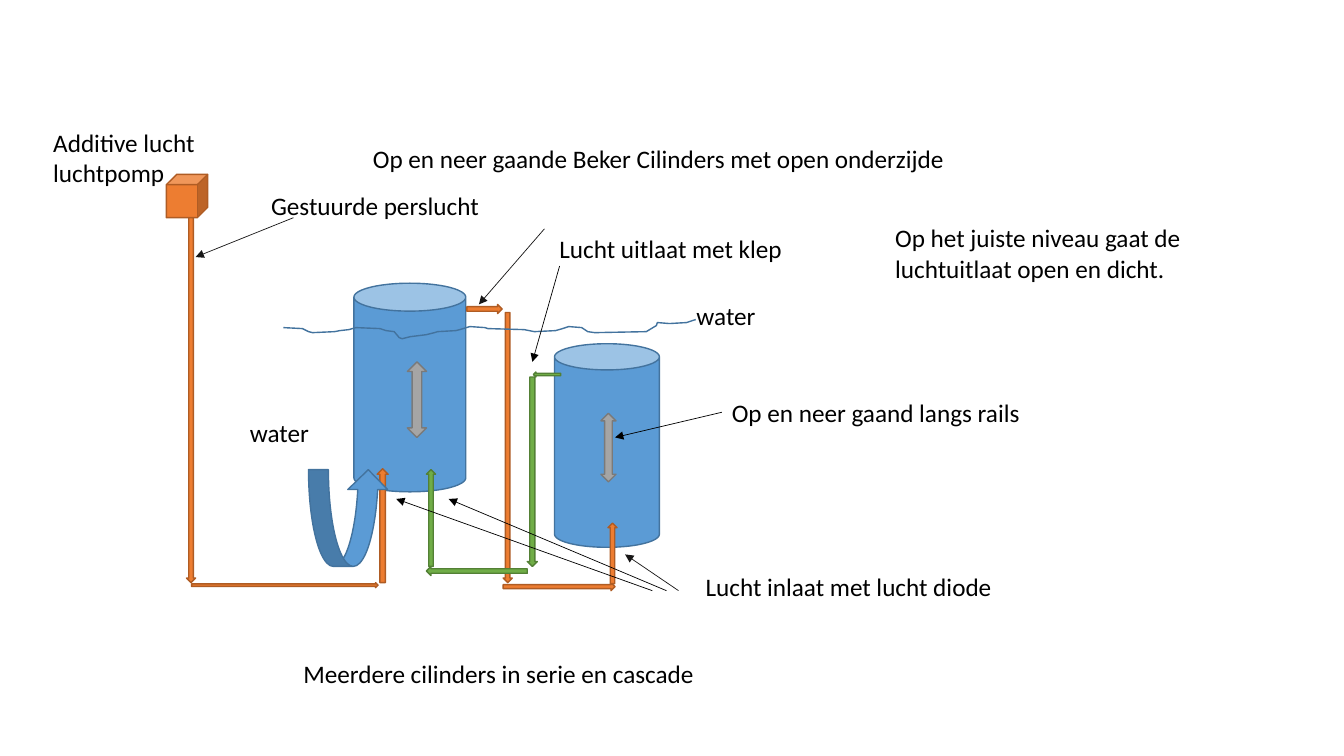
from lxml import etree
from pptx import Presentation
from pptx.dml.color import RGBColor
from pptx.enum.shapes import MSO_CONNECTOR, MSO_SHAPE
from pptx.enum.text import MSO_AUTO_SIZE
from pptx.oxml.ns import qn
from pptx.util import Pt

PX = 9144  # 100 px to the inch
CAN, CUBE = MSO_SHAPE.CAN, MSO_SHAPE.CUBE
RIGHT, LEFT = MSO_SHAPE.RIGHT_ARROW, MSO_SHAPE.LEFT_ARROW
UP, DOWN = MSO_SHAPE.UP_ARROW, MSO_SHAPE.DOWN_ARROW
UP_DOWN, CURVED_UP = MSO_SHAPE.UP_DOWN_ARROW, MSO_SHAPE.CURVED_UP_ARROW
STRAIGHT = MSO_CONNECTOR.STRAIGHT
GROW = MSO_AUTO_SIZE.SHAPE_TO_FIT_TEXT

# (fill, outline)
BLUE = ("5B9BD5", "43739E")
ORANGE = ("ED7D31", "AF5C24")
GREEN = ("70AD47", "538035")
GREY = ("A5A5A5", "7A7A7A")
BLACK, SOFT_BLACK = "000000", "181717"


def rgb(value):
    return RGBColor.from_string(value)


def emu(*lengths):
    return [length * PX for length in lengths]


class Diagram:
    font, size = "Calibri", 18

    def __init__(self, slide):
        self.shapes = slide.shapes

    def outline(self, item, color, width):
        item.line.color.rgb = rgb(color)
        item.line.width = Pt(width)

    def solid(self, preset, box, colors):
        solid = self.shapes.add_shape(preset, *emu(*box))
        solid.shadow.inherit = False
        solid.fill.solid()
        solid.fill.fore_color.rgb = rgb(colors[0])
        self.outline(solid, colors[1], 1)

    def label(self, text, *box):
        label = self.shapes.add_textbox(*emu(*box))
        frame = label.text_frame
        frame.word_wrap = True
        frame.auto_size = GROW
        run = frame.paragraphs[0].add_run()
        run.text = text
        run.font.name, run.font.size = self.font, Pt(self.size)
        run.font.color.rgb = rgb(BLACK)
        return label

    def pointer(self, start, end, color=BLACK, source=None):
        pointer = self.shapes.add_connector(STRAIGHT, *emu(*start, *end))
        if source is not None:
            pointer.begin_connect(source, 1)
        self.outline(pointer, color, 0.5)
        properties = pointer._element.spPr
        line = properties.find(qn("a:ln"))
        etree.SubElement(line, qn("a:tailEnd"), type="triangle")
        etree.SubElement(properties, qn("a:effectLst"))

    def wave(self, points, color):
        builder = self.shapes.build_freeform(*points[0], scale=PX)
        builder.add_line_segments(points[1:], close=False)
        wave = builder.convert_to_shape()
        wave.shadow.inherit = False
        wave.fill.background()
        self.outline(wave, color, 1)


def main():
    prs = Presentation()
    prs.slide_width, prs.slide_height = emu(1333, 750)
    diagram = Diagram(prs.slides.add_slide(prs.slide_layouts[6]))

    # Cylinders
    for cylinder in ((351, 281, 111, 207), (550, 341, 104, 202)):
        diagram.solid(CAN, cylinder, BLUE)

    # Air pump and compressed-air pipes
    for preset, box in (
        (RIGHT, (463, 302, 35, 9)),
        (DOWN, (499, 310, 9, 268)),
        (RIGHT, (499, 578, 111, 8)),
        (UP, (603, 519, 9, 60)),
        (CUBE, (165, 173, 41, 43)),
        (DOWN, (185, 216, 9, 362)),
        (RIGHT, (190, 578, 185, 5)),
        (UP, (374, 465, 11, 113)),
    ):
        diagram.solid(preset, box, ORANGE)

    # Water surface
    diagram.wave([
        (281, 325), (300, 326), (306, 329), (310, 330), (332, 329),
        (337, 328), (346, 327), (353, 325), (377, 326), (383, 328),
        (391, 329), (396, 335), (399, 336), (407, 334), (423, 332),
        (431, 330), (434, 329), (452, 328), (456, 327), (466, 324),
        (481, 325), (484, 326), (520, 327), (530, 329), (551, 328),
        (558, 326), (564, 324), (577, 325), (583, 329), (590, 330),
        (641, 329), (646, 326), (651, 323), (652, 320), (664, 321),
        (681, 320), (687, 318), (690, 317),
    ], BLUE[1])

    # Up and down movement
    for movement in ((404, 359, 19, 75), (596, 410, 15, 68)):
        diagram.solid(UP_DOWN, movement, GREY)

    # Return pipes
    for preset, box in (
        (LEFT, (529, 369, 27, 5)),
        (DOWN, (523, 374, 10, 188)),
        (LEFT, (423, 562, 100, 9)),
        (UP, (423, 466, 9, 96)),
    ):
        diagram.solid(preset, box, GREEN)

    # Labels
    for text, *box in (
        ("Additive lucht luchtpomp", 43, 121, 270, 71),
        ("Op en neer gaande Beker Cilinders met open onderzijde",
         360, 137, 645, 40),
        ("Lucht uitlaat met klep", 545, 227, 285, 40),
        ("Gestuurde perslucht", 259, 184, 240, 40),
        ("Lucht inlaat met lucht diode", 690, 562, 353, 40),
        ("water", 681, 293, 197, 40),
        ("Op het juiste niveau gaat de luchtuitlaat open en dicht.",
         878, 216, 342, 71),
        ("Meerdere cilinders in serie en cascade", 291, 648, 611, 40),
        ("water", 238, 409, 97, 40),
    ):
        diagram.label(text, *box)
    rails = diagram.label("Op en neer gaand langs rails", 716, 389, 327, 40)

    # Pointers from labels to the installation
    for start, end, color in (
        ((540, 227), (475, 302), SOFT_BLACK),
        ((291, 216), (194, 255), SOFT_BLACK),
        ((673, 586), (620, 550), SOFT_BLACK),
        ((555, 264), (528, 359), BLACK),
        ((661, 586), (445, 495), BLACK),
        ((647, 586), (393, 495), BLACK),
    ):
        diagram.pointer(start, end, color)
    diagram.pointer((716, 409), (610, 434), source=rails)

    # Water flowing into the first cylinder
    diagram.solid(CURVED_UP, (306, 466, 79, 96), BLUE)

    prs.save("out.pptx")


if __name__ == "__main__":
    main()
